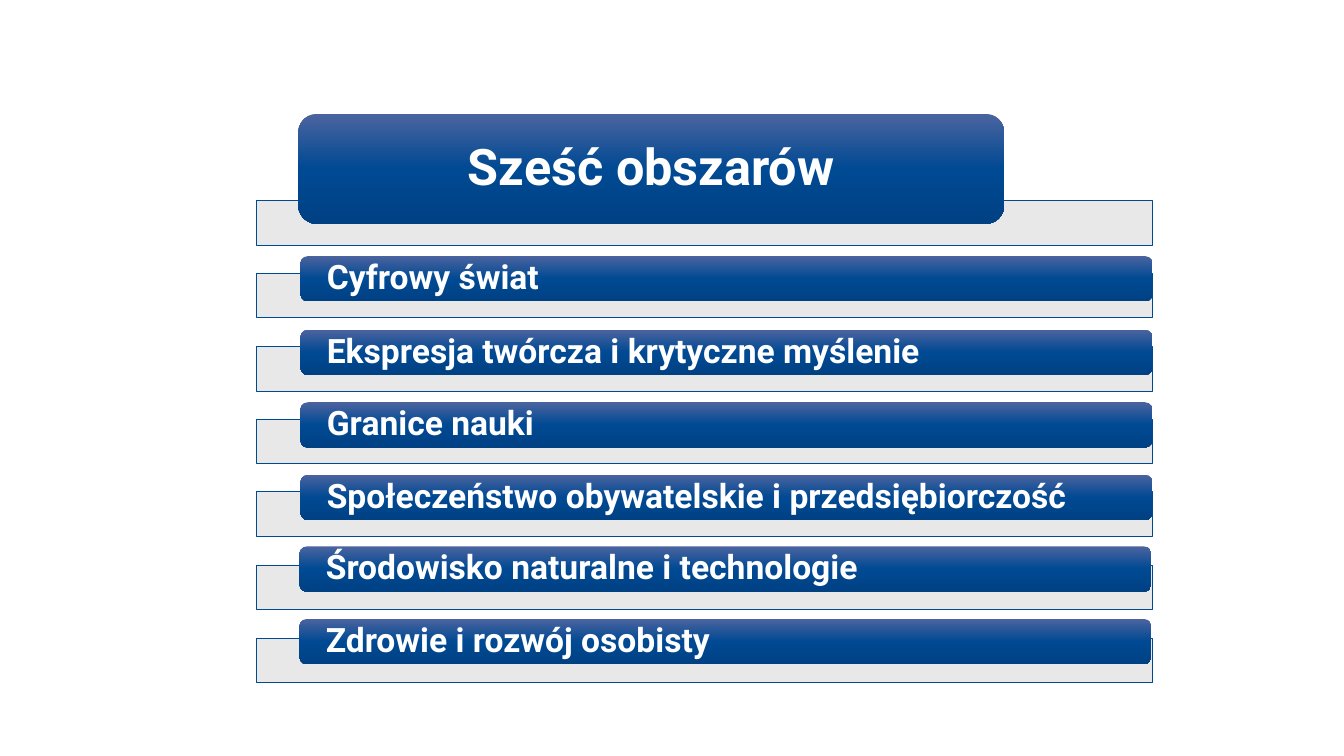
from copy import deepcopy
from dataclasses import dataclass

from lxml.etree import SubElement
from pptx import Presentation
from pptx.dml.color import RGBColor
from pptx.enum.shapes import MSO_SHAPE
from pptx.enum.text import MSO_ANCHOR, PP_ALIGN
from pptx.oxml.ns import qn
from pptx.shapes.autoshape import Shape
from pptx.slide import Slide
from pptx.util import Pt

EMU_PER_PX = 9144  # 100 px to the inch

WHITE = RGBColor(0xFF, 0xFF, 0xFF)
RAIL_GREY = RGBColor(0xE7, 0xE6, 0xE6)
BLUE = RGBColor(0x00, 0x49, 0x93)
GRADIENT_STOPS = (
    (0.0, RGBColor(0x4B, 0x64, 0x9F)),
    (0.5, BLUE),
    (1.0, RGBColor(0x00, 0x41, 0x83)),
)

RAIL_LEFT, RAIL_TOP, RAIL_WIDTH, RAIL_HEIGHT = 254, 199, 889, 44
RAIL_SPAN = 434  # from the first rail to the last
TEXT_INSET = 24


@dataclass(frozen=True)
class Bar:
    text: str
    left: int = 298
    lift: int = 17  # height of the bar's top above its rail
    width: int = 845
    height: int = 45
    size: int = 24
    alignment: PP_ALIGN = PP_ALIGN.LEFT


BARS = (
    Bar("Sześć obszarów", 296, 86, 700, 109, 36, PP_ALIGN.CENTER),
    Bar("Cyfrowy świat"),
    Bar("Ekspresja twórcza i krytyczne myślenie"),
    Bar("Granice nauki"),
    Bar("Społeczeństwo obywatelskie i przedsiębiorczość"),
    Bar("Środowisko naturalne i technologie", 297, 19),
    Bar("Zdrowie i rozwój osobisty", 297, 19),
)


def px(length: int) -> int:
    return length * EMU_PER_PX


def add_box(slide: Slide, kind: MSO_SHAPE, left: int, top: int,
            width: int, height: int) -> Shape:
    shape = slide.shapes.add_shape(kind, px(left), px(top), px(width), px(height))
    shape.shadow.inherit = False
    return shape


def add_rail(slide: Slide, top: int) -> None:
    shape = add_box(slide, MSO_SHAPE.RECTANGLE, RAIL_LEFT, top, RAIL_WIDTH, RAIL_HEIGHT)
    shape.fill.solid()
    shape.fill.fore_color.rgb = RAIL_GREY
    color = shape._element.spPr.find(qn("a:solidFill"))[0]
    SubElement(color, qn("a:alpha"), val="90000")
    shape.line.color.rgb = BLUE
    shape.line.width = Pt(0.5)


def fill_gradient(shape: Shape) -> None:
    shape.fill.gradient()
    shape.fill.gradient_angle = 270
    stop_list = shape._element.spPr.find(qn("a:gradFill")).find(qn("a:gsLst"))
    stop_list.append(deepcopy(stop_list[0]))  # the third stop
    for stop, (position, color) in zip(shape.fill.gradient_stops, GRADIENT_STOPS):
        stop.position = position
        stop.color.rgb = color


def add_bar(slide: Slide, bar: Bar, rail_top: int) -> None:
    shape = add_box(slide, MSO_SHAPE.ROUNDED_RECTANGLE, bar.left,
                    rail_top - bar.lift, bar.width, bar.height)
    fill_gradient(shape)
    shape.line.fill.background()

    frame = shape.text_frame
    frame_format = {
        "word_wrap": True,
        "vertical_anchor": MSO_ANCHOR.MIDDLE,
        "margin_left": px(TEXT_INSET),
        "margin_right": px(TEXT_INSET),
        "margin_top": 0,
        "margin_bottom": 0,
    }
    for name, value in frame_format.items():
        setattr(frame, name, value)

    paragraph = frame.paragraphs[0]
    paragraph.alignment = bar.alignment
    paragraph.line_spacing = 0.9
    run = paragraph.add_run()
    run.text = bar.text
    font_format = {"name": "Roboto", "size": Pt(bar.size), "bold": True}
    for name, value in font_format.items():
        setattr(run.font, name, value)
    run.font.color.rgb = WHITE


def main() -> None:
    presentation = Presentation()
    presentation.slide_width = px(1333)
    presentation.slide_height = px(750)
    slide = presentation.slides.add_slide(presentation.slide_layouts[6])

    # Each bar lies over its own rail
    for index, bar in enumerate(BARS):
        rail_top = RAIL_TOP + round(index * RAIL_SPAN / (len(BARS) - 1))
        add_rail(slide, rail_top)
        add_bar(slide, bar, rail_top)

    presentation.save("out.pptx")


if __name__ == "__main__":
    main()
